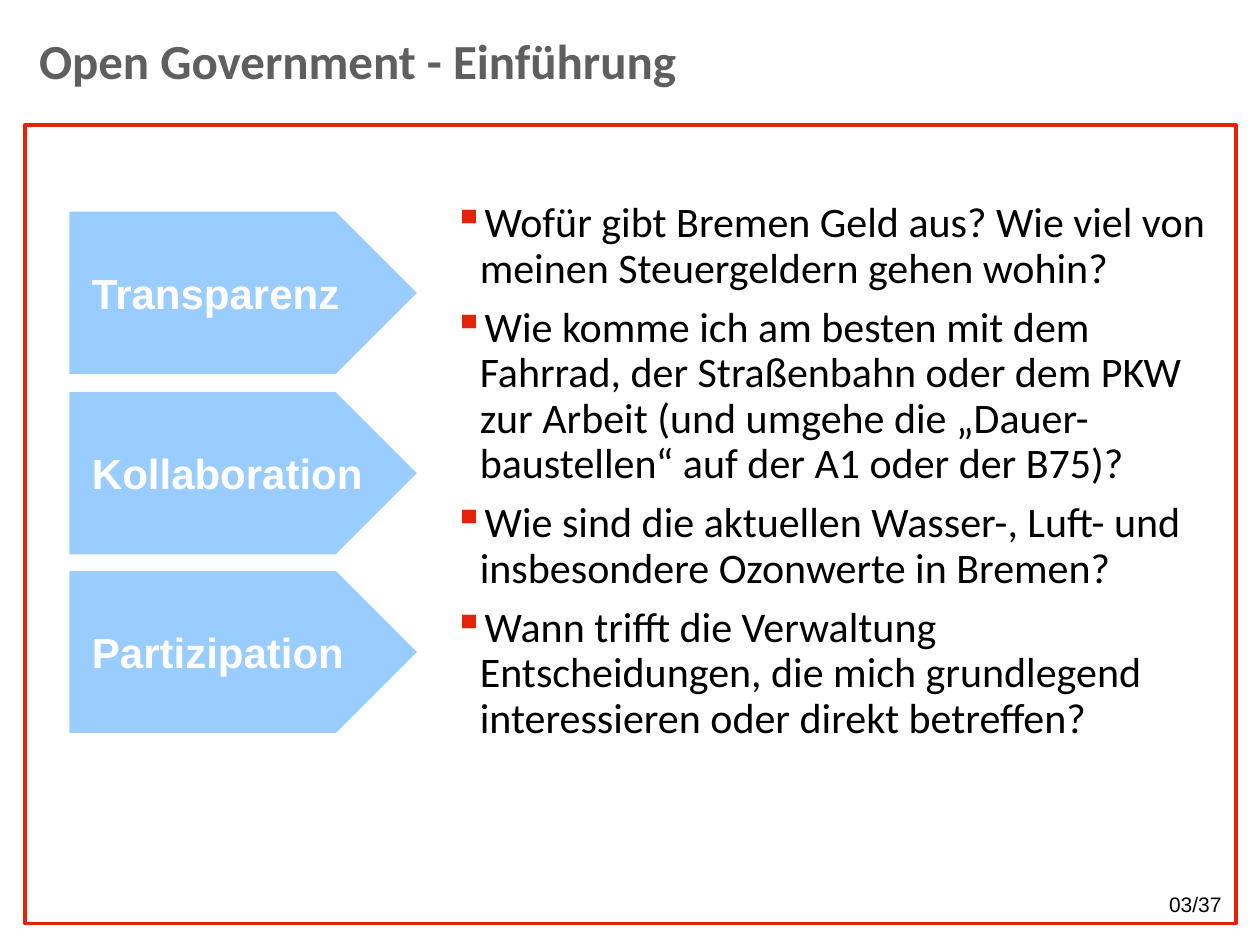
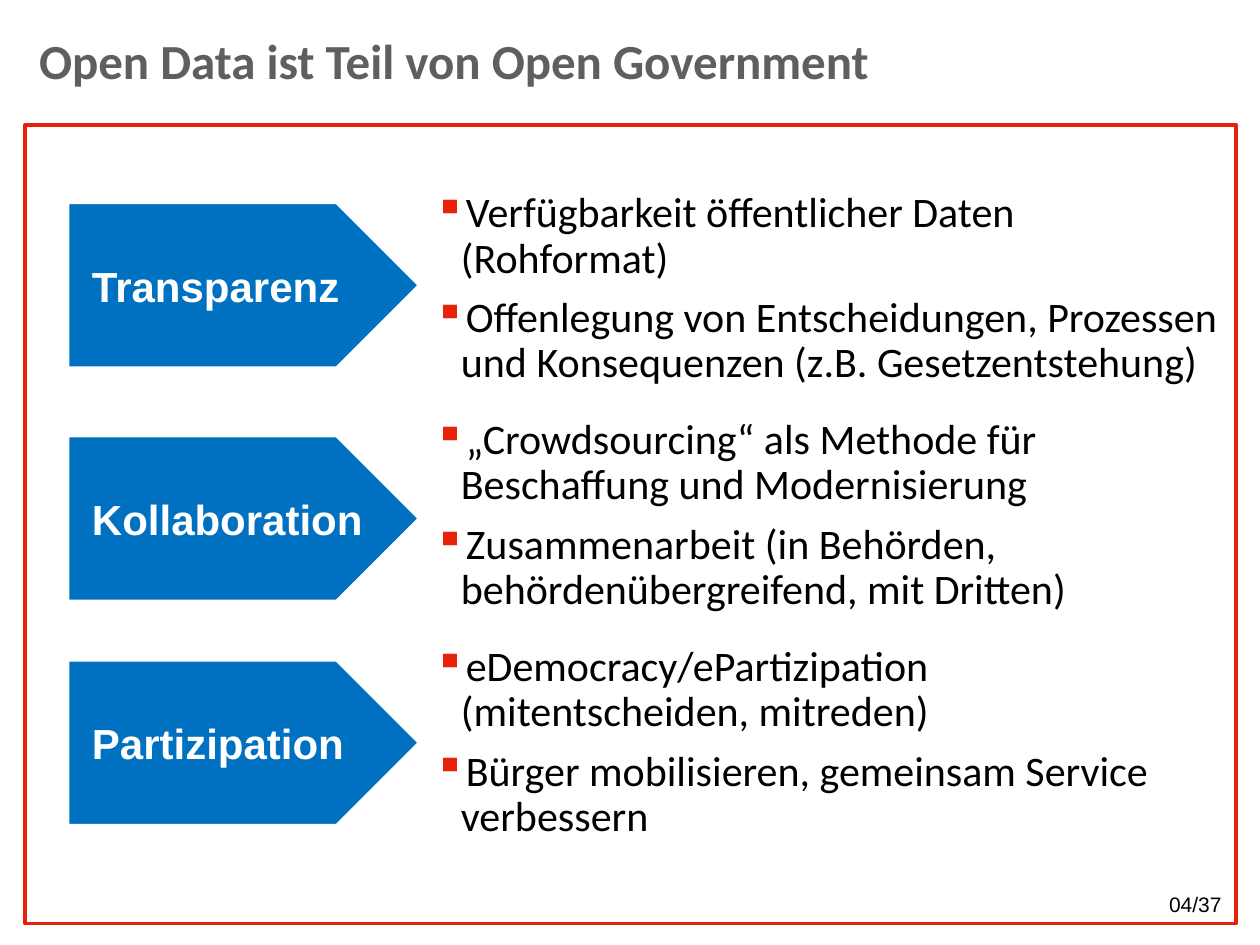
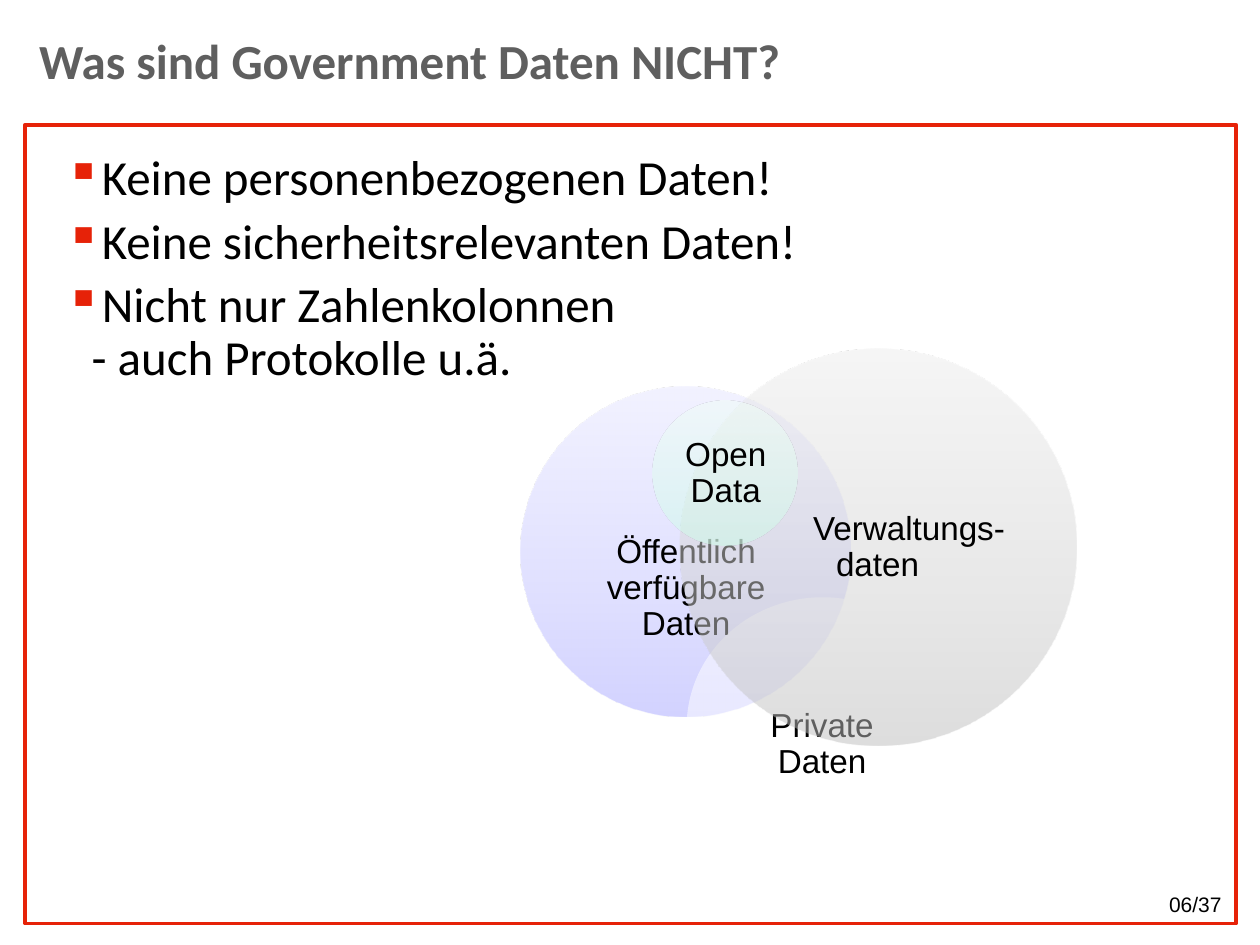
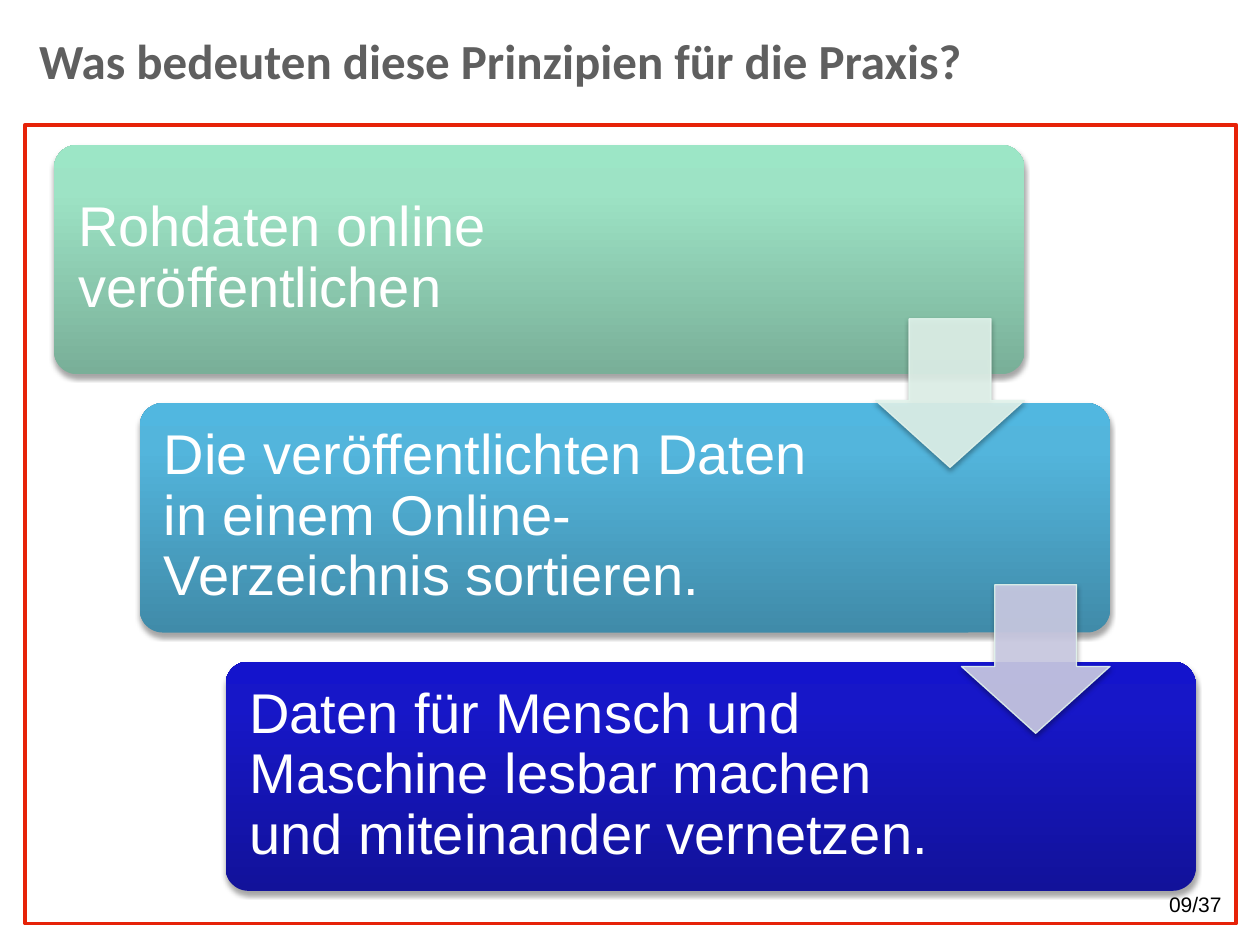
"""Builds four slides on open government and open data."""
import pptx
import pptx.dml.color
import pptx.enum.dml
import pptx.enum.shapes
import pptx.enum.text
import pptx.oxml.ns
import pptx.util
from lxml import etree

Inches = pptx.util.Inches
Pt = pptx.util.Pt
RGBColor = pptx.dml.color.RGBColor
SHAPE = pptx.enum.shapes.MSO_SHAPE
ALIGN = pptx.enum.text.PP_ALIGN
ANCHOR = pptx.enum.text.MSO_ANCHOR
FIT = pptx.enum.text.MSO_AUTO_SIZE
qn = pptx.oxml.ns.qn

RED = RGBColor(0xE6, 0x22, 0x08)
GREY = RGBColor(0x5F, 0x5F, 0x5F)
BLACK = RGBColor(0, 0, 0)
WHITE = RGBColor(0xFF, 0xFF, 0xFF)
SKY = RGBColor(0x99, 0xCC, 0xFF)
BLUE = RGBColor(0x00, 0x70, 0xC0)
MINT = RGBColor(0xE2, 0xF4, 0xEC)
LILAC = RGBColor(0xCD, 0xCD, 0xE6)

PILLARS = ["Transparenz", "Kollaboration", "Partizipation"]

INTRO = {
    "title": "Open Government - Einführung", "page": "03/37",
    "fill": SKY, "tops": [1.66, 3.09, 4.51], "box": (3.5, 1.55, 6.3, 5.12),
    "gaps": [0, 8, 8, 8],
    "points": [
        "Wofür gibt Bremen Geld aus? Wie viel von meinen Steuergeldern gehen wohin?",
        "Wie komme ich am besten mit dem Fahrrad, der Straßenbahn oder dem PKW zur "
        "Arbeit (und umgehe die „Dauer-baustellen“ auf der A1 oder der B75)?",
        "Wie sind die aktuellen Wasser-, Luft- und insbesondere Ozonwerte in Bremen?",
        "Wann trifft die Verwaltung Entscheidungen, die mich grundlegend "
        "interessieren oder direkt betreffen?",
    ],
}
PARTS = {
    "title": "Open Data ist Teil von Open Government", "page": "04/37", "wide": 8.1,
    "fill": BLUE, "tops": [1.6, 3.45, 5.23], "box": (3.35, 1.47, 6.46, 5.51),
    "gaps": [0, 8, 18, 8, 18, 8],
    "points": [
        "Verfügbarkeit öffentlicher Daten (Rohformat)",
        "Offenlegung von Entscheidungen, Prozessen und Konsequenzen "
        "(z.B. Gesetzentstehung)",
        "„Crowdsourcing“ als Methode für Beschaffung und Modernisierung",
        "Zusammenarbeit (in Behörden, behördenübergreifend, mit Dritten)",
        "eDemocracy/ePartizipation\n(mitentscheiden, mitreden)",
        "Bürger mobilisieren, gemeinsam Service verbessern",
    ],
}
LIMITS = [
    "Keine personenbezogenen Daten!",
    "Keine sicherheitsrelevanten Daten!",
    "Nicht nur Zahlenkolonnen\n- auch Protokolle u.ä.",
]
CIRCLES = [
    {"text": "Öffentlich verfügbare Daten", "at": (4.13, 3.07, 2.62, 2.62),
     "label": (4.52, 3.46, 1.85, 1.85), "drop": 0.57,
     "stops": [(0, "A7A7FF"), (35, "C1C1FF"), (100, "E7E7FF")]},
    {"text": "Private Daten", "at": (5.45, 4.74, 2.16, 2.05),
     "label": (5.76, 5.04, 1.53, 1.45), "drop": 0.29},
    {"text": "Verwaltungs-daten", "at": (5.39, 2.77, 3.15, 3.15),
     "label": (5.85, 3.23, 2.23, 2.23), "first": 0.5,
     "stops": [(0, "BDBDBD"), (35, "D1D1D1"), (100, "EEEEEE")]},
    {"text": "Open Data", "at": (5.18, 3.18, 1.15, 1.15),
     "label": (5.35, 3.35, 0.82, 0.82),
     "stops": [(0, "CCFFE8"), (35, "DAFFEE"), (100, "F1FFF8")]},
]
STEPS = [
    ("Rohdaten online veröffentlichen",
     [(0, "79AF98"), (80, "9DE3C5"), (100, "9CE6C6")]),
    ("Die veröffentlichten Daten in einem Online-Verzeichnis sortieren.",
     [(0, "408BA9"), (80, "53B5DC"), (100, "51B7E0")]),
    ("Daten für Mensch und Maschine lesbar machen und miteinander vernetzen.",
     [(0, "12129A"), (80, "1717C8"), (100, "1414CC")]),
]
ARROWS = [(2.53, MINT), (4.64, LILAC)]
SHIFT, DROP = 0.68, 2.05


def place(box):
    """Turns inches into lengths."""
    return [Inches(n) for n in box]


def write(shape, texts, size=24, font="Arial", color=BLACK, bold=False,
          align=ALIGN.LEFT, anchor=ANCHOR.TOP, inset=(0.1, 0.05, 0.1, 0.05),
          wrap=True, fit=FIT.NONE, line=None, gaps=None, bullet=None,
          left=0, first=0):
    """Fills a shape with formatted paragraphs."""
    frame = shape.text_frame
    frame.word_wrap, frame.auto_size = wrap, fit
    frame.vertical_anchor = anchor
    (frame.margin_left, frame.margin_top,
     frame.margin_right, frame.margin_bottom) = place(inset)
    for i, text in enumerate(texts):
        para = frame.add_paragraph() if i else frame.paragraphs[0]
        para.text = text
        para.alignment = align
        if line:
            para.line_spacing = line
        if gaps and gaps[i]:
            para.space_before = Pt(gaps[i])
        props = para._p.get_or_add_pPr()
        if left or first:
            props.set("marL", str(Inches(left)))
            props.set("indent", str(Inches(first)))
        if bullet:
            tint = etree.SubElement(props, qn("a:buClr"))
            etree.SubElement(tint, qn("a:srgbClr"), val=str(RED))
            etree.SubElement(props, qn("a:buChar"), char=bullet)
        for run in para.runs:
            run.font.size, run.font.name, run.font.bold = Pt(size), font, bold
            run.font.color.rgb = color


def label(slide, box, texts, **style):
    """Adds a text box."""
    write(slide.shapes.add_textbox(*place(box)), texts, **style)


def fade(color, alpha):
    """Sets the opacity of a colour element in percent."""
    etree.SubElement(color, qn("a:alpha"), val=str(alpha * 1000))


def draw(slide, kind, box, fill=None, stops=None, alpha=100, edge=None, width=1,
         shade=False, adjust=()):
    """Adds a preset shape with its fill, line and shadow."""
    shape = slide.shapes.add_shape(kind, *place(box))
    for i, value in enumerate(adjust):
        shape.adjustments[i] = value
    if stops:
        shape.fill.gradient()
        shape.fill.gradient_angle = 90
        ramp = shape._element.spPr.find(".//" + qn("a:gsLst"))
        for stop in list(ramp):
            ramp.remove(stop)
        for pos, tone in stops:
            stop = etree.SubElement(ramp, qn("a:gs"), pos=str(pos * 1000))
            etree.SubElement(stop, qn("a:srgbClr"), val=tone)
    else:
        shape.fill.solid()
        shape.fill.fore_color.rgb = fill
    if edge is None:
        shape.line.fill.background()
    else:
        shape.line.color.rgb = edge
        shape.line.width = Pt(width)
    if alpha < 100:
        for color in shape._element.spPr.iter(qn("a:srgbClr")):
            fade(color, alpha)
    shape.shadow.inherit = False
    if shade:
        effects = shape._element.spPr.find(qn("a:effectLst"))
        cast = etree.SubElement(effects, qn("a:outerShdw"), blurRad=str(Pt(3.1)),
                                dist=str(Pt(1.8)), dir="5400000", rotWithShape="0")
        fade(etree.SubElement(cast, qn("a:srgbClr"), val=str(BLACK)), 35)
    return shape


def start(deck, title, page, wide=9.6):
    """Adds a slide with the shared frame, title and page number."""
    slide = deck.slides.add_slide(deck.slide_layouts[5])
    draw(slide, SHAPE.RECTANGLE, (0.2, 0.99, 9.61, 6.34), WHITE, edge=RED, width=2.25)
    head = slide.shapes.title
    head.left, head.top, head.width, head.height = place((0.21, 0, wide, 0.95))
    write(head, [title], size=28, font="Calibri", color=GREY, bold=True,
          anchor=ANCHOR.MIDDLE)
    label(slide, (9.18, 7.03, 0.62, 0.3), [page], size=12, wrap=False,
          fit=FIT.SHAPE_TO_FIT_TEXT)
    return slide


def points(slide, box, texts, gaps, size=24):
    """Adds a list with red square bullets."""
    label(slide, box, texts, size=size, font="Calibri", line=0.9, gaps=gaps,
          bullet="▪", left=0.21, first=-0.21)


def pillars(deck, data):
    """Builds a slide of three pentagons beside a list."""
    slide = start(deck, data["title"], data["page"], data.get("wide", 9.6))
    points(slide, data["box"], data["points"], data["gaps"])
    for name, top in zip(PILLARS, data["tops"]):
        shape = draw(slide, SHAPE.PENTAGON, (0.53, top, 2.81, 1.33), data["fill"],
                     edge=WHITE, width=3)
        write(shape, [name], color=WHITE, bold=True, anchor=ANCHOR.MIDDLE,
              inset=(0, 0.05, 0, 0.05), left=0.2)


def circles(deck):
    """Builds the slide of overlapping kinds of data."""
    slide = start(deck, "Was sind Government Daten NICHT?", "06/37")
    points(slide, (0.42, 1.17, 9.17, 1.95), LIMITS, [0, 6, 6], size=28)
    for item in CIRCLES:
        draw(slide, SHAPE.OVAL, item["at"], WHITE, item.get("stops"), alpha=50)
        label(slide, item["label"], [item["text"]], size=19, line=0.9,
              align=ALIGN.CENTER, anchor=ANCHOR.MIDDLE, first=item.get("first", 0),
              inset=(0.08, 0.08 + item.get("drop", 0), 0.08, 0.08))


def steps(deck):
    """Builds the staircase of three steps."""
    slide = start(deck, "Was bedeuten diese Prinzipien für die Praxis?", "09/37")
    for i, (text, stops) in enumerate(STEPS):
        left, top = 0.43 + SHIFT * i, 1.15 + DROP * i
        draw(slide, SHAPE.ROUNDED_RECTANGLE, (left, top, 7.7, 1.82), stops=stops,
             shade=True, adjust=[0.1])
        label(slide, (left + 0.06, top + 0.05, 5.73, 1.71), [text], size=32,
              color=WHITE, line=0.9, anchor=ANCHOR.MIDDLE, inset=[0.13] * 4)
    for i, (top, fill) in enumerate(ARROWS):
        draw(slide, SHAPE.DOWN_ARROW, (6.95 + SHIFT * i, top, 1.18, 1.18), fill,
             alpha=90, edge=MINT, width=0.75, shade=True, adjust=[0.55, 0.45])


def main():
    """Builds and saves the deck."""
    deck = pptx.Presentation()
    deck.slide_width, deck.slide_height = Inches(10), Inches(7.5)
    pillars(deck, INTRO)
    pillars(deck, PARTS)
    circles(deck)
    steps(deck)
    deck.save("out.pptx")


if __name__ == "__main__":
    main()
